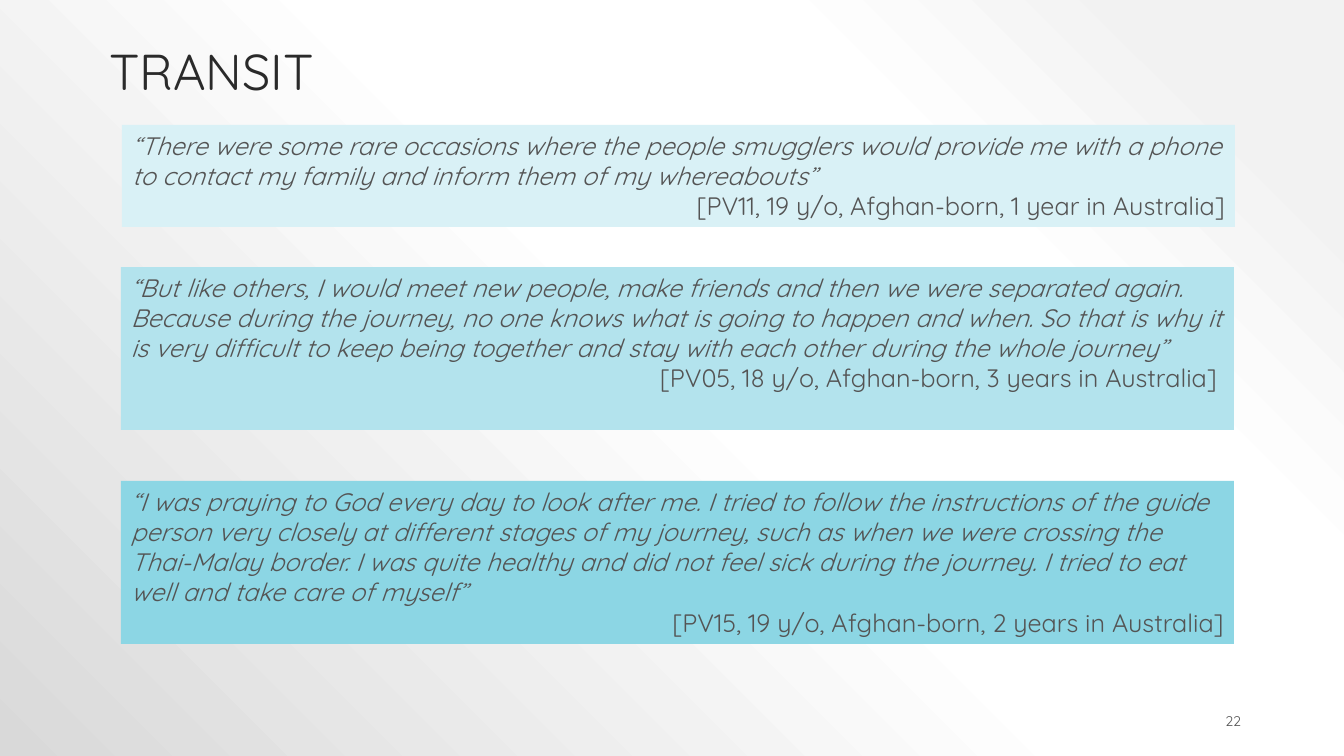
from lxml import etree
from pptx import Presentation
from pptx.dml.color import RGBColor
from pptx.enum.shapes import MSO_SHAPE
from pptx.enum.text import MSO_ANCHOR as Anchor, PP_ALIGN as Align
from pptx.oxml.ns import qn
from pptx.util import Pt

EMU_PER_PX = 914400 / 100.8
FONT = "Quicksand"
TEXT_GREY = "545454"

QUOTES = [
    ((122, 125, 1113, 102), "D9F1F6",
     "“There were some rare occasions where the people smugglers would provide me "
     "with a phone to contact my family and inform them of my whereabouts”",
     "[PV11, 19 y/o, Afghan-born, 1 year in Australia]"),
    ((121, 267, 1113, 163), "B3E3ED",
     "“But like others, I would meet new people, make friends and then we were "
     "separated again. Because during the journey, no one knows what is going to "
     "happen and when. So that is why it is very difficult to keep being together "
     "and stay with each other during the whole journey”",
     "[PV05, 18 y/o, Afghan-born, 3 years in Australia] "),
    ((121, 481, 1113, 163), "8CD6E4",
     "“I was praying to God every day to look after me. I tried to follow the "
     "instructions of the guide person very closely at different stages of my "
     "journey, such as when we were crossing the Thai-Malay border. I was quite "
     "healthy and did not feel sick during the journey. I tried to eat well and "
     "take care of myself”",
     "[PV15, 19 y/o, Afghan-born, 2 years in Australia]"),
]


def px(length):
    return round(length * EMU_PER_PX)


def color(hex_value):
    return RGBColor.from_string(hex_value)


def write(paragraph, text, size, hex_value=TEXT_GREY, align=Align.LEFT, italic=False):
    paragraph.text = text
    paragraph.alignment = align
    font = paragraph.font
    font.name, font.size, font.italic = FONT, Pt(size), italic
    font.color.rgb = color(hex_value)


def paint_background(slide):
    """Radial grey gradient spreading from the top right corner."""
    slide.background.fill.gradient()
    gradient = slide.element.find(".//" + qn("a:gradFill"))
    for child in list(gradient):
        gradient.remove(child)
    stops = etree.SubElement(gradient, qn("a:gsLst"))
    for percent, shade in [(10, "F2F2F2"), (28, "FFFFFF"), (48, "FFFFFF"), (100, "D9D9D9")]:
        stop = etree.SubElement(stops, qn("a:gs"), pos=str(percent * 1000))
        etree.SubElement(stop, qn("a:srgbClr"), val=shade)
    circle = etree.SubElement(gradient, qn("a:path"), path="circle")
    etree.SubElement(circle, qn("a:fillToRect"), l="100000", b="100000")


def add_title(slide, box, text):
    title = slide.shapes.title
    title.left, title.top, title.width, title.height = map(px, box)
    title.text_frame.vertical_anchor = Anchor.BOTTOM
    heading = title.text_frame.paragraphs[0]
    write(heading, text, 36, "2A2A2A")
    heading.line_spacing = 0.9


def add_quote(slide, box, fill, quote, speaker):
    panel = slide.shapes.add_shape(MSO_SHAPE.RECTANGLE, *map(px, box))
    panel.shadow.inherit = False
    panel.fill.solid()
    panel.fill.fore_color.rgb = color(fill)
    panel.line.fill.background()
    frame = panel.text_frame
    frame.word_wrap = True
    frame.vertical_anchor = Anchor.TOP
    write(frame.paragraphs[0], quote, 18, italic=True)
    write(frame.add_paragraph(), speaker, 18, align=Align.RIGHT)


def add_page_number(slide, box, number):
    frame = slide.shapes.add_textbox(*map(px, box)).text_frame
    frame.word_wrap = True
    frame.vertical_anchor = Anchor.MIDDLE
    write(frame.paragraphs[0], number, 10, align=Align.RIGHT)


def main():
    deck = Presentation()
    deck.slide_width, deck.slide_height = px(1344), px(756)
    slide = deck.slides.add_slide(deck.slide_layouts[5])  # Title Only

    paint_background(slide)
    add_title(slide, (99, 14, 1159, 93), "TRANSIT")
    for quote in QUOTES:
        add_quote(slide, *quote)
    add_page_number(slide, (890, 701, 361, 40), "22")

    deck.save("out.pptx")


if __name__ == "__main__":
    main()
